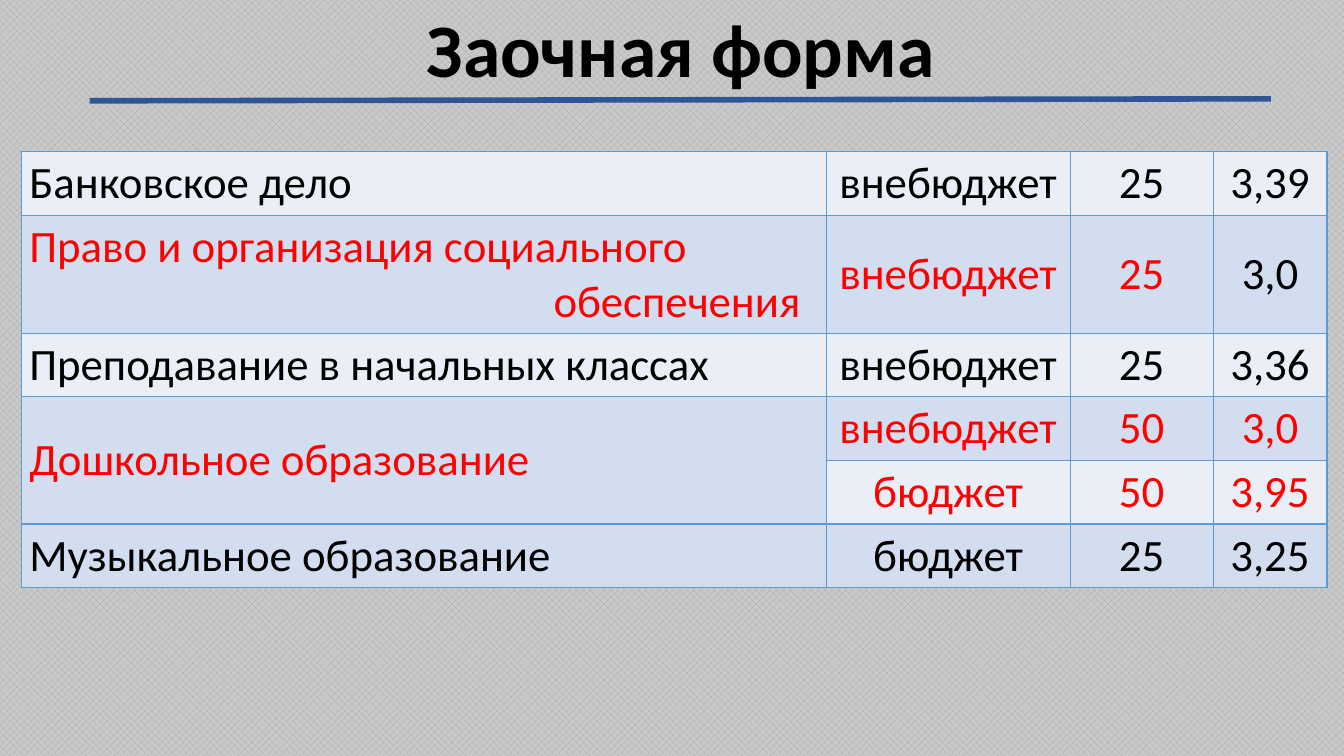
from lxml import etree
from pptx import Presentation
from pptx.dml.color import RGBColor
from pptx.enum import dml, shapes, text
from pptx.oxml import ns
from pptx.util import Pt

BLACK = RGBColor(0x00, 0x00, 0x00)
RED = RGBColor(0xFF, 0x00, 0x00)
RULE_BLUE = RGBColor(0x2F, 0x55, 0x97)
BORDER_BLUE = RGBColor(0x5B, 0x9B, 0xD5)
BANDS = RGBColor(0xEA, 0xEF, 0xF7), RGBColor(0xD2, 0xDE, 0xEF)
PATTERN_FRONT = RGBColor(0xA6, 0xA6, 0xA6)
PATTERN_BACK = RGBColor(0xC9, 0xC9, 0xC9)

COLUMN_WIDTHS = 574.6, 174.2, 102.2, 81.4
ROW_HEIGHTS = 45.4, 84.4, 45.4, 45.4, 45.4, 45.4
HANGING_ROW = 1
MERGED_ROW = 3
PROGRAMMES = [
    [("Банковское дело", BLACK), ("внебюджет", BLACK), ("25", BLACK), ("3,39", BLACK)],
    [("Право и организация социального обеспечения", RED), ("внебюджет", RED),
     ("25", RED), ("3,0", BLACK)],
    [("Преподавание в начальных классах", BLACK), ("внебюджет", BLACK),
     ("25", BLACK), ("3,36", BLACK)],
    [("Дошкольное образование", RED), ("внебюджет", RED), ("50", RED), ("3,0", RED)],
    [None, ("бюджет", RED), ("50", RED), ("3,95", RED)],
    [("Музыкальное образование", BLACK), ("бюджет", BLACK), ("25", BLACK), ("3,25", BLACK)],
]


def write(frame, words, *, size, color=BLACK, bold=False, centred=True, spacing=0, hanging=0):
    """Fill a text frame with one formatted paragraph."""
    para = frame.paragraphs[0]
    para.alignment = text.PP_ALIGN.CENTER if centred else text.PP_ALIGN.LEFT
    para.space_before = para.space_after = Pt(spacing)
    if hanging:
        properties = para._p.get_or_add_pPr()
        properties.set("marL", str(Pt(hanging)))
        properties.set("indent", str(-Pt(hanging)))
    span = para.add_run()
    span.text = words
    span.font.name = "Calibri"
    span.font.size = Pt(size)
    span.font.bold = bold
    span.font.color.rgb = color


def add_title(page, left, top, width, height):
    """Place the heading and the slightly rising rule below it."""
    box = page.shapes.add_textbox(Pt(left), Pt(top), Pt(width), Pt(height))
    box.text_frame.word_wrap = True
    write(box.text_frame, "Заочная форма", size=54, bold=True)

    rule = page.shapes.add_connector(
        shapes.MSO_CONNECTOR.STRAIGHT,
        Pt(left + 11.5), Pt(top + 74.2), Pt(left + width - 12.3), Pt(top + 72.8))
    rule.line.color.rgb = RULE_BLUE
    rule.line.width = Pt(4)
    etree.SubElement(rule._element.spPr, ns.qn("a:effectLst"))


def add_borders(cell):
    properties = cell._tc.get_or_add_tcPr()
    for side in "LRTB":
        line = etree.SubElement(properties, ns.qn(f"a:ln{side}"), w=str(Pt(1)))
        fill = etree.SubElement(line, ns.qn("a:solidFill"))
        etree.SubElement(fill, ns.qn("a:srgbClr"), val=str(BORDER_BLUE))


def add_programme_table(page, left, top):
    table = page.shapes.add_table(
        len(ROW_HEIGHTS), len(COLUMN_WIDTHS), Pt(left), Pt(top),
        Pt(sum(COLUMN_WIDTHS)), Pt(sum(ROW_HEIGHTS))).table
    for column, width in zip(table.columns, COLUMN_WIDTHS):
        column.width = Pt(width)
    for row, height in zip(table.rows, ROW_HEIGHTS):
        row.height = Pt(height)
    table.cell(MERGED_ROW, 0).merge(table.cell(MERGED_ROW + 1, 0))

    for row, entries in enumerate(PROGRAMMES):
        for column, entry in enumerate(entries):
            cell = table.cell(row, column)
            add_borders(cell)
            cell.fill.solid()
            cell.fill.fore_color.rgb = BANDS[row % 2]
            cell.margin_left = cell.margin_right = Pt(5.4)
            cell.margin_top = cell.margin_bottom = Pt(3.2)
            cell.vertical_anchor = text.MSO_ANCHOR.MIDDLE
            if entry:
                words, color = entry
                write(cell.text_frame, words, size=32, color=color, centred=column > 0,
                      spacing=3 if row else 6,
                      hanging=374.4 if (row, column) == (HANGING_ROW, 0) else 0)


def add_background(page):
    fill = page.background.fill
    fill.patterned()
    fill.pattern = dml.MSO_PATTERN.PERCENT_50
    fill.fore_color.rgb = PATTERN_FRONT
    fill.back_color.rgb = PATTERN_BACK


def main():
    deck = Presentation()
    deck.slide_width, deck.slide_height = Pt(960), Pt(540)
    page = deck.slides.add_slide(deck.slide_layouts[6])
    add_background(page)
    add_title(page, 52.5, -2.2, 867.6, 72.7)
    add_programme_table(page, 15.6, 108.3)
    deck.save("out.pptx")


if __name__ == "__main__":
    main()
